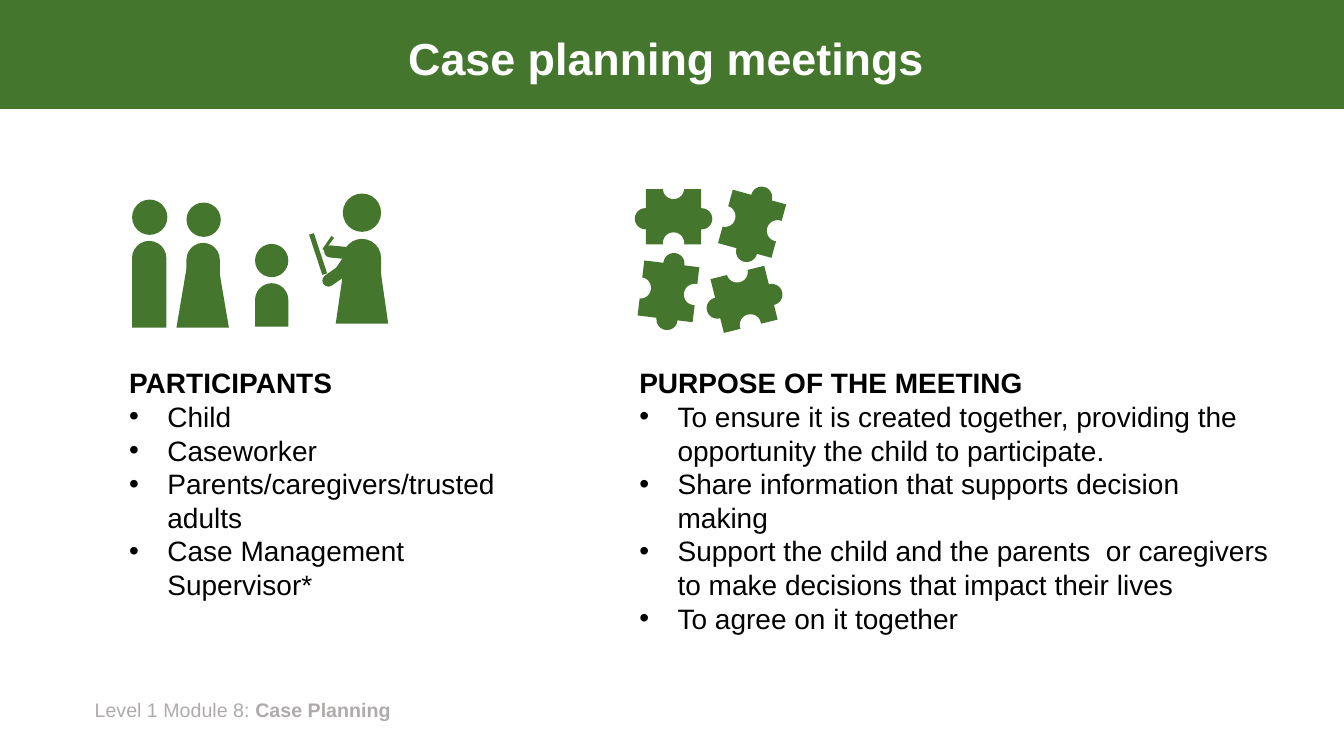
from math import cos, radians, sin

from lxml.etree import SubElement
from pptx import Presentation
from pptx.dml.color import RGBColor
from pptx.enum.shapes import MSO_CONNECTOR, MSO_SHAPE as Preset
from pptx.enum.text import MSO_ANCHOR as Anchor, MSO_AUTO_SIZE as AutoSize, PP_ALIGN as Align
from pptx.oxml.ns import qn
from pptx.util import Emu, Pt

GREEN = RGBColor(0x45, 0x76, 0x2D)
WHITE = RGBColor(0xFF, 0xFF, 0xFF)
BLACK = RGBColor(0x00, 0x00, 0x00)
GREY = RGBColor(0xAF, 0xAB, 0xAB)

EMU_PER_PX = 9144  # 100 px to the inch
SLIDE_SIZE = (1333, 750)
BULLET_INDENT = 38
PIECE_SIDE, KNOB_SIZE = 55, 21
NOTCH_ARC, KNOB_ARC = (209.39, 116.17), (211.53, 113.91)
ROUND_TOP = (0.5, 0)
LIMB_TOP = (0.49, 0)

# Offset from the piece centre, turn, arc and colour of each notch and knob
PIECE_EDGES = [
    (0, 26, 180, NOTCH_ARC, WHITE),
    (0, -28, 0, KNOB_ARC, WHITE),
    (28, 2, 270, KNOB_ARC, GREEN),
    (-28, 2, 90, KNOB_ARC, GREEN),
]
# Centre and turn
PUZZLE_PIECES = [(746, 222, 285.4), (668, 215, 0), (738, 297, 346), (663, 289, 277)]

# Preset, box, turn, adjustments
CHILD = [
    (Preset.ROUND_2_SAME_RECTANGLE, (253, 281, 33, 43), 0, ROUND_TOP),
    (Preset.OVAL, (253, 242, 33, 33), 0, ()),
]
CASEWORKER = [
    (Preset.ROUND_2_SAME_RECTANGLE, (336, 249, 12, 29), 214.3, LIMB_TOP),
    (Preset.ROUND_2_SAME_RECTANGLE, (323, 266, 12, 20), 235, LIMB_TOP),
    (Preset.RECTANGLE, (313, 231, 5, 42), 341.8, ()),
    (Preset.ROUND_2_SAME_RECTANGLE, (332, 234, 12, 33), 275.6, LIMB_TOP),
    (Preset.FLOWCHART_MANUAL_OPERATION, (333, 249, 52, 72), 180, ()),
    (Preset.ROUND_2_SAME_RECTANGLE, (340, 237, 38, 83), 0, ROUND_TOP),
    (Preset.OVAL, (340, 192, 38, 38), 0, ()),
]
MOTHER = [
    (Preset.OVAL, (185, 201, 34, 34), 0, ()),
    (Preset.ROUND_2_SAME_RECTANGLE, (185, 241, 33, 83), 0, ROUND_TOP),
    (Preset.TRAPEZOID, (175, 267, 52, 58), 0, (0.19,)),
]
FATHER = [
    (Preset.OVAL, (131, 198, 35, 35), 0, ()),
    (Preset.ROUND_2_SAME_RECTANGLE, (131, 239, 34, 86), 0, ROUND_TOP),
]

PARTICIPANTS = [
    "Child",
    "Caseworker",
    "Parents/caregivers/trusted adults",
    "Case Management Supervisor*",
]
PURPOSES = [
    "To ensure it is created together, providing the opportunity the child to participate.",
    "Share information that supports decision making",
    "Support the child and the parents  or caregivers to make decisions that impact their lives",
    "To agree on it together",
]


def px(length):
    return Emu(round(length * EMU_PER_PX))


def apply(target, **values):
    for name, value in values.items():
        setattr(target, name, value)


class SlideBuilder:
    font_name = "Arial"

    def __init__(self, slide):
        self.slide = slide

    def place(self, shape, box):
        apply(shape, **dict(zip(("left", "top", "width", "height"), map(px, box))))

    def run(self, paragraph, text, size, color, bold=False):
        run = paragraph.add_run()
        run.text = text
        apply(run.font, name=self.font_name, size=Pt(size), bold=bold)
        run.font.color.rgb = color

    def shape(self, preset, box, turn=0, adjustments=(), color=GREEN):
        shape = self.slide.shapes.add_shape(preset, *map(px, box))
        shape.rotation = turn
        for index, value in enumerate(adjustments):
            shape.adjustments[index] = value
        shape.fill.solid()
        shape.fill.fore_color.rgb = color
        shape.line.fill.background()
        shape.shadow.inherit = False
        return shape

    def band(self, box):
        """Draw the header band behind everything else."""
        element = self.shape(Preset.RECTANGLE, box)._element
        element.getparent().insert(2, element)

    def figure(self, parts):
        for part in parts:
            self.shape(*part)

    def line(self, start, end, width):
        connector = self.slide.shapes.add_connector(
            MSO_CONNECTOR.STRAIGHT, *map(px, start + end))
        connector.line.color.rgb = GREEN
        connector.line.width = Pt(width)
        SubElement(connector._element.spPr, qn("a:effectLst"))

    def puzzle_piece(self, center_x, center_y, turn):
        def box(x, y, side):
            return x - side / 2, y - side / 2, side, side

        self.shape(Preset.RECTANGLE, box(center_x, center_y, PIECE_SIDE), turn)
        cosine, sine = cos(radians(turn)), sin(radians(turn))
        for x, y, edge_turn, arc, color in PIECE_EDGES:
            edge_x = center_x + x * cosine - y * sine
            edge_y = center_y + x * sine + y * cosine
            self.shape(Preset.CHORD, box(edge_x, edge_y, KNOB_SIZE),
                       (turn + edge_turn) % 360, arc, color)

    def title(self, text, box):
        title = self.slide.shapes.title
        self.place(title, box)
        apply(title.text_frame, vertical_anchor=Anchor.MIDDLE, auto_size=AutoSize.NONE)
        paragraph = title.text_frame.paragraphs[0]
        apply(paragraph, alignment=Align.CENTER, line_spacing=0.9)
        self.run(paragraph, text, 32, WHITE, bold=True)

    def bullet_list(self, index, heading, items, box):
        placeholder = self.slide.placeholders[index]
        self.place(placeholder, box)
        frame = placeholder.text_frame
        apply(frame, word_wrap=True, auto_size=AutoSize.NONE, vertical_anchor=Anchor.TOP)
        for position, text in enumerate([heading] + items):
            is_heading = position == 0
            paragraph = frame.paragraphs[0] if is_heading else frame.add_paragraph()
            apply(paragraph, space_before=Pt(0), space_after=Pt(0), line_spacing=1.0)
            properties = paragraph._p.get_or_add_pPr()
            indent = 0 if is_heading else px(BULLET_INDENT)
            properties.set("marL", str(int(indent)))
            properties.set("indent", str(int(-indent)))
            if is_heading:
                SubElement(properties, qn("a:buNone"))
            else:
                SubElement(properties, qn("a:buFont"), typeface=self.font_name)
                SubElement(properties, qn("a:buChar"), char="•")
            self.run(paragraph, text, 20, BLACK, bold=is_heading)

    def footer(self, label, name, box):
        frame = self.slide.shapes.add_textbox(*map(px, box)).text_frame
        frame.word_wrap = True
        self.run(frame.paragraphs[0], label, 14, GREY)
        self.run(frame.paragraphs[0], name, 14, GREY, bold=True)


def main():
    presentation = Presentation()
    presentation.slide_width, presentation.slide_height = map(px, SLIDE_SIZE)
    two_content = presentation.slide_layouts[3]
    builder = SlideBuilder(presentation.slides.add_slide(two_content))

    builder.band((0, 0, SLIDE_SIZE[0], 108))
    builder.title("Case planning meetings ", (92, 13, 1150, 95))
    builder.bullet_list(1, "PARTICIPANTS", PARTICIPANTS, (118, 358, 395, 246))
    builder.bullet_list(2, "PURPOSE OF THE MEETING", PURPOSES, (624, 358, 646, 279))
    builder.footer("Level 1 Module 8: ", "Case Planning", (84, 687, 455, 34))

    for piece in PUZZLE_PIECES:
        builder.puzzle_piece(*piece)
    for person in (CHILD, CASEWORKER, MOTHER, FATHER):
        builder.figure(person)
    builder.line((330, 235), (321, 248), 2.25)  # caseworker's pen

    presentation.save("out.pptx")


if __name__ == "__main__":
    main()
